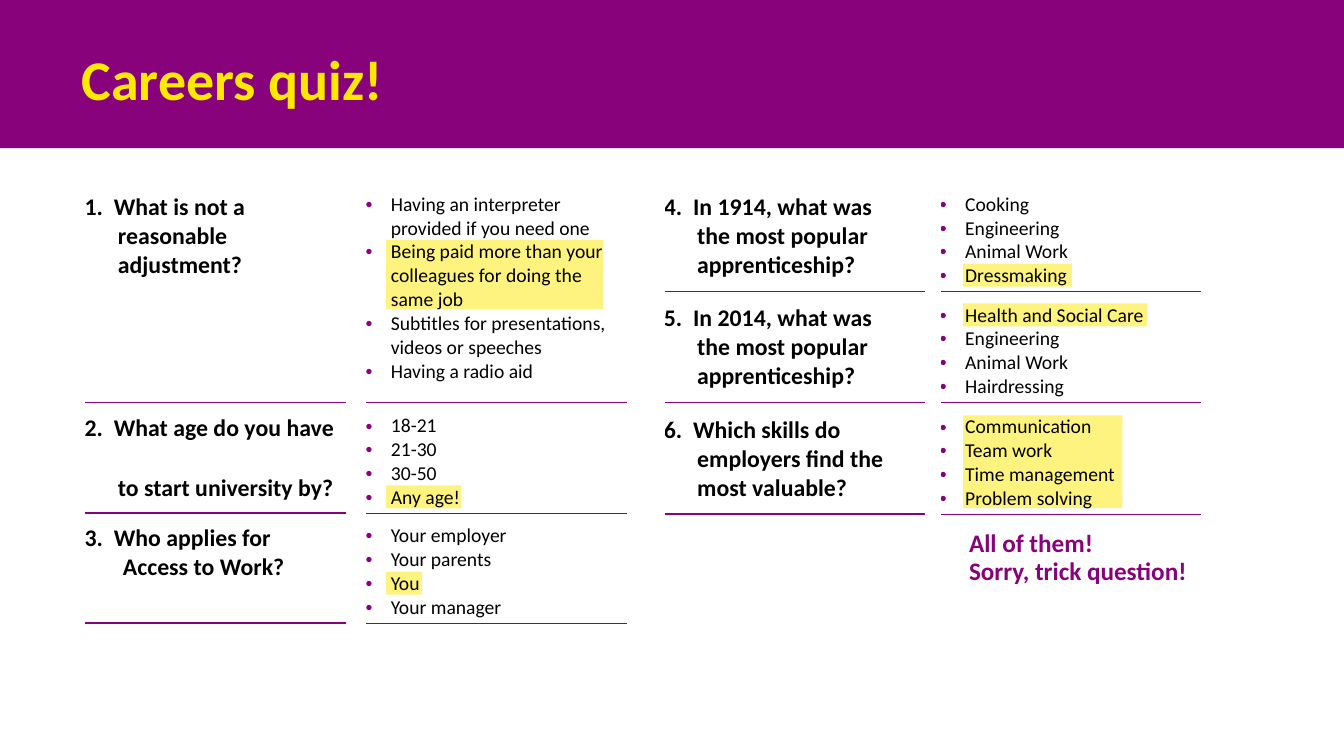
from lxml import etree
from pptx import Presentation
from pptx.dml.color import RGBColor
from pptx.enum.shapes import MSO_SHAPE
from pptx.enum.text import MSO_ANCHOR
from pptx.oxml.ns import qn
from pptx.util import Inches, Pt

RECTANGLE = MSO_SHAPE.RECTANGLE
MIDDLE = MSO_ANCHOR.MIDDLE
TOP = MSO_ANCHOR.TOP

COLORS = {"purple": "87027B", "yellow": "FFE900", "black": "000000", "white": "FFFFFF"}
FONT = "Calibri"
TITLE = "Careers quiz!"
CLOSING_LINES = [("All of them!", 5.18), ("Sorry, trick question!", 5.46)]

COLUMNS = [
    {
        "question_left": 0.84, "answer_left": 3.63, "highlight_offset": 0.2,
        "questions": [
            {"text": "1.  What is not a reasonable adjustment?",
             "top": 1.86, "height": 2.13, "indent": 0.33,
             "answers": ["Having an interpreter provided if you need one",
                         "Being paid more than your colleagues for doing the same job",
                         "Subtitles for presentations, videos or speeches",
                         "Having a radio aid"],
             "highlight": {"first_line": 2, "lines": 3, "width": 2.16}},
            {"text": "2.  What age do you have \vto start university by?",
             "top": 4.06, "height": 1.03, "indent": 0.33,
             "answers": ["18-21", "21-30", "30-50", "Any age!"],
             "highlight": {"first_line": 3, "lines": 1, "width": 0.75}},
            {"text": "3.  Who applies for Access to Work?",
             "top": 5.15, "height": 1.03, "indent": 0.38,
             "answers": ["Your employer", "Your parents", "You", "Your manager"],
             "highlight": {"first_line": 2, "lines": 1, "width": 0.36}},
        ],
    },
    {
        "question_left": 6.59, "answer_left": 9.33, "highlight_offset": 0.23,
        "questions": [
            {"text": "4.  In 1914, what was \vthe most popular apprenticeship?",
             "top": 1.86, "height": 1.03, "indent": 0.33,
             "answers": ["Cooking", "Engineering", "Animal Work", "Dressmaking"],
             "highlight": {"first_line": 3, "lines": 1, "width": 1.08}},
            {"text": "5.  In 2014, what was \vthe most popular apprenticeship?",
             "top": 2.96, "height": 1.03, "indent": 0.33,
             "answers": ["Health and Social Care", "Engineering", "Animal Work", "Hairdressing"],
             "highlight": {"first_line": 0, "lines": 1, "width": 1.83}},
            {"text": "6.  Which skills do employers find the most valuable?",
             "top": 4.07, "height": 1.03, "indent": 0.33,
             "answers": ["Communication", "Team work", "Time management", "Problem solving"],
             "highlight": {"first_line": 0, "lines": 4, "width": 1.58}},
        ],
    },
]

SLIDE_WIDTH, SLIDE_HEIGHT = 13.34, 7.5
TABLE_WIDTH = 2.6
CELL_MARGIN = 0.05
LINE_PITCH = 0.235
HIGHLIGHT_LINE = 0.23
BULLET_INDENT = 0.25


def add_text(paragraph, text, size, color, bold=False):
    for index, line in enumerate(text.split("\v")):
        if index:
            paragraph.add_line_break()
        run = paragraph.add_run()
        run.text = line
        run.font.name = FONT
        run.font.size = Pt(size)
        run.font.bold = bold
        run.font.color.rgb = RGBColor.from_string(COLORS[color])


def add_color(parent, color):
    return etree.SubElement(parent, qn("a:srgbClr"), val=COLORS[color])


def add_rectangle(slide, left, top, width, height, color):
    shape = slide.shapes.add_shape(
        RECTANGLE, Inches(left), Inches(top), Inches(width), Inches(height))
    shape.shadow.inherit = False
    shape.fill.solid()
    shape.fill.fore_color.rgb = RGBColor.from_string(COLORS[color])
    shape.line.fill.background()
    return shape


def add_highlight(slide, column, question):
    highlight = question["highlight"]
    shape = add_rectangle(
        slide,
        column["answer_left"] + column["highlight_offset"],
        question["top"] + CELL_MARGIN + highlight["first_line"] * LINE_PITCH,
        highlight["width"], highlight["lines"] * HIGHLIGHT_LINE, "yellow")
    color = shape.fill._xPr.find(".//" + qn("a:srgbClr"))
    etree.SubElement(color, qn("a:alpha"), val="50000")


def set_borders(cell):
    properties = cell._tc.get_or_add_tcPr()
    borders = [("L", "white"), ("R", "white"), ("T", None), ("B", "purple")]
    for index, (side, color) in enumerate(borders):
        line = etree.Element(qn("a:ln" + side), w=str(Pt(1)))
        if color:
            add_color(etree.SubElement(line, qn("a:solidFill")), color)
        else:
            etree.SubElement(line, qn("a:noFill"))
        properties.insert(index, line)


def set_indent(paragraph, indent, bulleted):
    properties = paragraph._p.get_or_add_pPr()
    properties.set("marL", str(Inches(indent)))
    properties.set("indent", str(-Inches(indent)))
    if bulleted:
        add_color(etree.SubElement(properties, qn("a:buClr")), "purple")
        etree.SubElement(properties, qn("a:buFont"), typeface="Arial")
        etree.SubElement(properties, qn("a:buChar"), char="•")


def add_cell_table(slide, left, question, lines, size, indent, bold=False, bulleted=False):
    frame = slide.shapes.add_table(
        1, 1, Inches(left), Inches(question["top"]),
        Inches(TABLE_WIDTH), Inches(question["height"]))
    frame.table.first_row = False
    frame.table.horz_banding = False
    cell = frame.table.cell(0, 0)
    cell.fill.background()
    set_borders(cell)
    cell.margin_left = 0
    cell.margin_right = Inches(0.1)
    cell.margin_top = cell.margin_bottom = Inches(CELL_MARGIN)
    cell.vertical_anchor = TOP
    for index, text in enumerate(lines):
        paragraph = cell.text_frame.add_paragraph() if index else cell.text_frame.paragraphs[0]
        set_indent(paragraph, indent, bulleted)
        add_text(paragraph, text, size, "black", bold)


def add_label(slide, text, left, top, width, height, size, color):
    box = slide.shapes.add_textbox(Inches(left), Inches(top), Inches(width), Inches(height))
    box.text_frame.word_wrap = True
    add_text(box.text_frame.paragraphs[0], text, size, color, bold=True)
    return box.text_frame


def main():
    presentation = Presentation()
    presentation.slide_width = Inches(SLIDE_WIDTH)
    presentation.slide_height = Inches(SLIDE_HEIGHT)
    slide = presentation.slides.add_slide(presentation.slide_layouts[6])

    add_rectangle(slide, 0, 0, SLIDE_WIDTH, 1.47, "purple")
    title_frame = add_label(slide, TITLE, 0.68, 0.35, 9.16, 0.84, 40, "yellow")
    title_frame.vertical_anchor = MIDDLE
    title_frame.margin_left = title_frame.margin_right = Inches(0.13)
    title_frame.margin_top = title_frame.margin_bottom = Inches(0.07)

    for column in COLUMNS:
        for question in column["questions"]:
            add_highlight(slide, column, question)
            add_cell_table(slide, column["question_left"], question, [question["text"]],
                           17, question["indent"], bold=True)
            add_cell_table(slide, column["answer_left"], question, question["answers"],
                           14, BULLET_INDENT, bulleted=True)

    for text, top in CLOSING_LINES:
        add_label(slide, text, 9.52, top, 3.22, 0.4, 18, "purple")

    presentation.save("out.pptx")


if __name__ == "__main__":
    main()
